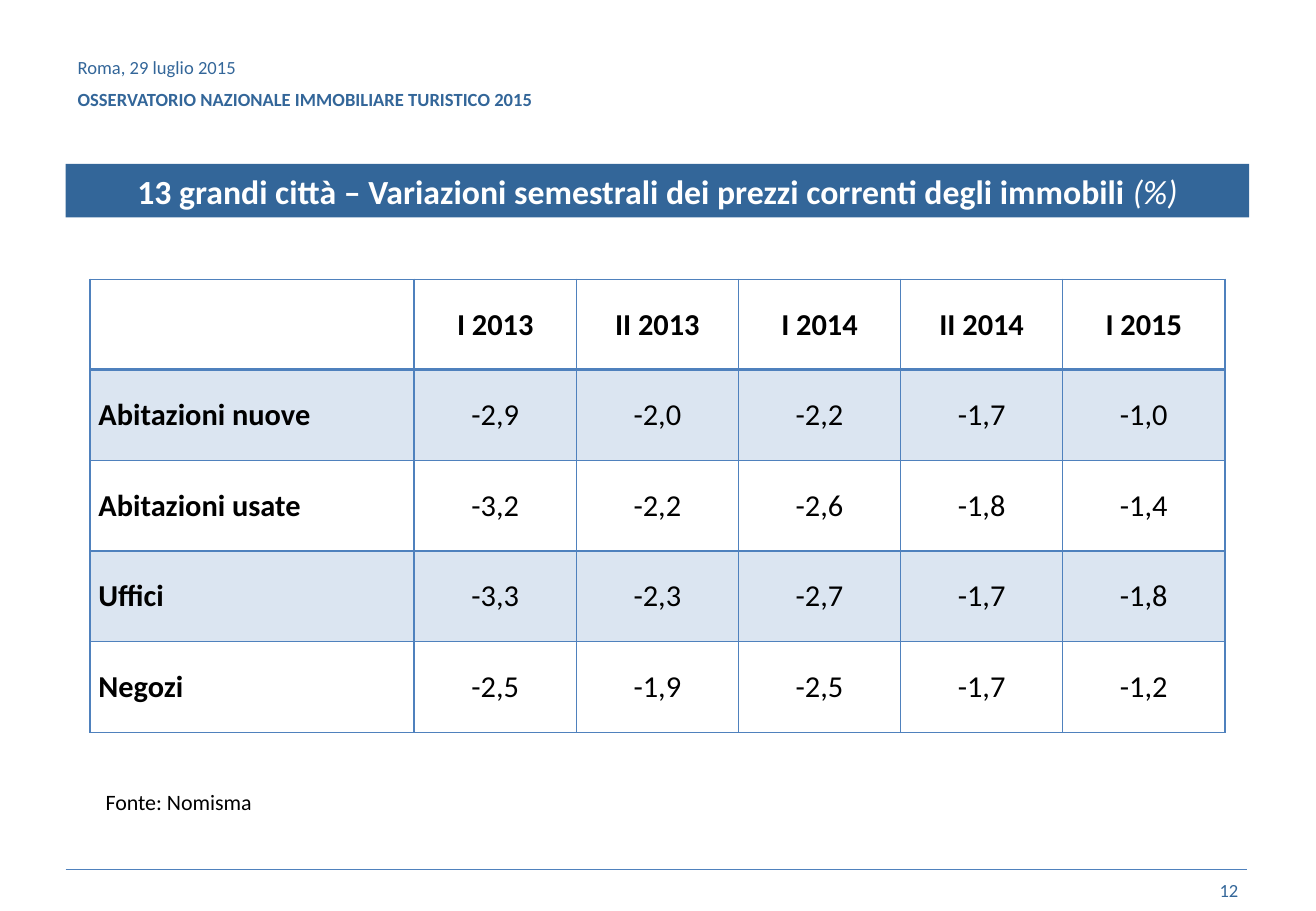
import pptx
import pptx.dml.color
import pptx.enum.text
import pptx.enum.shapes
import pptx.oxml
import pptx.oxml.ns
import pptx.util

PX = 9144
FONT = "Calibri"
NAVY, BLUE, BLACK, WHITE = "336699", "4F81BD", "000000", "FFFFFF"
ALIGN = pptx.enum.text.PP_ALIGN
MIDDLE = pptx.enum.text.MSO_ANCHOR.MIDDLE

HEADINGS = ["", "I 2013", "II 2013", "I 2014", "II 2014", "I 2015"]
PRICE_CHANGES = [
    ["Abitazioni nuove", "-2,9", "-2,0", "-2,2", "-1,7", "-1,0"],
    ["Abitazioni usate", "-3,2", "-2,2", "-2,6", "-1,8", "-1,4"],
    ["Uffici", "-3,3", "-2,3", "-2,7", "-1,7", "-1,8"],
    ["Negozi", "-2,5", "-1,9", "-2,5", "-1,7", "-1,2"],
]


def px(*lengths):
    return [pptx.util.Emu(length * PX) for length in lengths]


def color(value):
    return pptx.dml.color.RGBColor.from_string(value)


def style_span(span, size, shade, bold=False, italic=False):
    span.font.name = FONT
    span.font.size = pptx.util.Pt(size)
    span.font.color.rgb = color(shade)
    span.font.bold = bold
    span.font.italic = italic


def style_frame(frame, size, shade, align=ALIGN.LEFT, bold=False):
    for para in frame.paragraphs:
        para.alignment = align
        for span in para.runs:
            style_span(span, size, shade, bold)


def add_text(page, area, text, size, shade, align=ALIGN.LEFT, wrap=True):
    box = page.shapes.add_textbox(*px(*area))
    box.text_frame.text = text
    box.text_frame.word_wrap = wrap
    style_frame(box.text_frame, size, shade, align)
    return box.text_frame


def add_header(page, area):
    frame = add_text(
        page, area,
        "Roma, 29 luglio 2015\nOSSERVATORIO NAZIONALE IMMOBILIARE TURISTICO 2015",
        11, NAVY)
    frame.vertical_anchor = MIDDLE
    event = frame.paragraphs[1]
    event.space_before = pptx.util.Pt(6)
    event.runs[0].font.bold = True


def add_title(page, area):
    title = page.shapes.title
    title.left, title.top, title.width, title.height = px(*area)
    title.fill.solid()
    title.fill.fore_color.rgb = color(NAVY)
    frame = title.text_frame
    frame.text = "13 grandi città – Variazioni semestrali dei prezzi correnti degli immobili "
    frame.word_wrap = True
    frame.auto_size = pptx.enum.text.MSO_AUTO_SIZE.NONE
    frame.vertical_anchor = MIDDLE
    style_frame(frame, 20, WHITE, ALIGN.CENTER, True)
    unit = frame.paragraphs[0].add_run()
    unit.text = "(%)"
    style_span(unit, 20, WHITE, italic=True)


def set_borders(cell, widths):
    properties = cell._tc.get_or_add_tcPr()
    for side, points in widths.items():
        properties.append(pptx.oxml.parse_xml(
            f'<a:ln{side} {pptx.oxml.ns.nsdecls("a")} w="{pptx.util.Pt(points)}">'
            f'<a:solidFill><a:srgbClr val="{BLUE}"/></a:solidFill></a:ln{side}>'))


def fill_cell(cell, tinted):
    if not tinted:
        cell.fill.background()
        return
    cell.fill.solid()
    cell.fill.fore_color.rgb = color(BLUE)
    shade = cell._tc.tcPr.find(".//" + pptx.oxml.ns.qn("a:solidFill") + "[last()]")
    shade = cell._tc.tcPr.find(pptx.oxml.ns.qn("a:solidFill"))
    shade[0].append(pptx.oxml.parse_xml(
        f'<a:alpha {pptx.oxml.ns.nsdecls("a")} val="20000"/>'))


def add_price_table(page, area):
    left, top, width, height = px(*area)
    rows = [HEADINGS] + PRICE_CHANGES
    table = page.shapes.add_table(
        len(rows), len(HEADINGS), left, top, width, height).table
    table.first_row = table.horz_banding = False
    share = width // (len(HEADINGS) + 1)
    for index, column in enumerate(table.columns):
        column.width = share if index else 2 * share
    for row_index, values in enumerate(rows):
        table.rows[row_index].height = height // len(rows)
        for column_index, value in enumerate(values):
            cell = table.cell(row_index, column_index)
            cell.text = value
            cell.vertical_anchor = MIDDLE
            cell.margin_left, cell.margin_right = px(7, 7)
            cell.margin_top = cell.margin_bottom = 0
            is_label = column_index == 0
            style_frame(cell.text_frame, 18, BLACK,
                        ALIGN.LEFT if is_label else ALIGN.CENTER,
                        is_label or row_index == 0)
            set_borders(cell, {"L": 1, "R": 1,
                               "T": 2 if row_index == 1 else 1,
                               "B": 2 if row_index == 0 else 1})
            fill_cell(cell, row_index % 2 == 1)


def add_footer(page, area):
    left, top, width, height = area
    rule = page.shapes.add_connector(
        pptx.enum.shapes.MSO_CONNECTOR.STRAIGHT,
        *px(left, top + 3, left + width - 3, top + 3))
    rule.line.color.rgb = color(BLUE)
    rule.line.width = pptx.util.Pt(0.25)
    rule._element.spPr.append(pptx.oxml.parse_xml(
        f'<a:effectLst {pptx.oxml.ns.nsdecls("a")}/>'))
    number = add_text(page, (left + width - 253, top, 253, height),
                      "12", 11, NAVY, ALIGN.RIGHT)
    number.vertical_anchor = MIDDLE


def main():
    deck = pptx.Presentation()
    deck.slide_width, deck.slide_height = px(1083, 750)
    page = deck.slides.add_slide(deck.slide_layouts[5])
    add_header(page, (54, 30, 803, 77))
    add_title(page, (54, 135, 974, 44))
    add_price_table(page, (74, 230, 934, 373))
    add_text(page, (77, 644, 142, 32), "Fonte: Nomisma", 13, BLACK, wrap=False)
    add_footer(page, (54, 713, 975, 40))
    deck.save("out.pptx")


if __name__ == "__main__":
    main()
